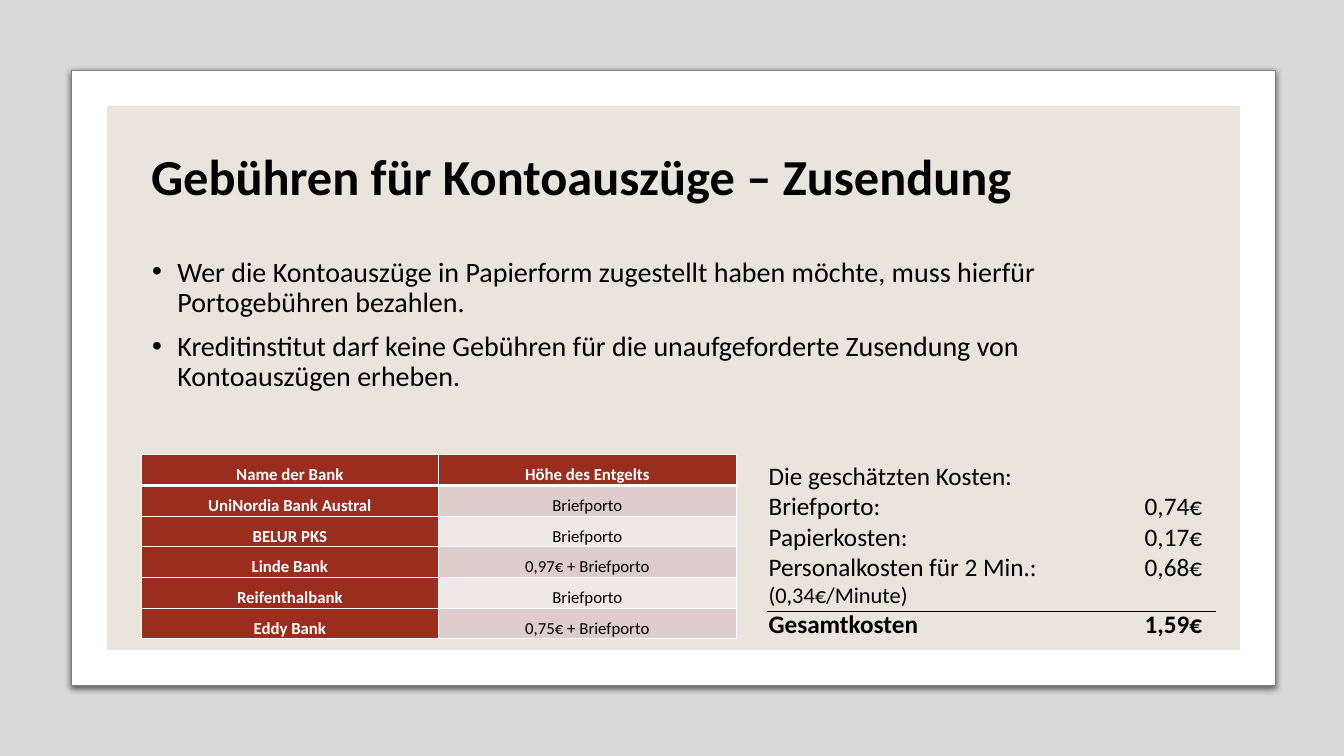
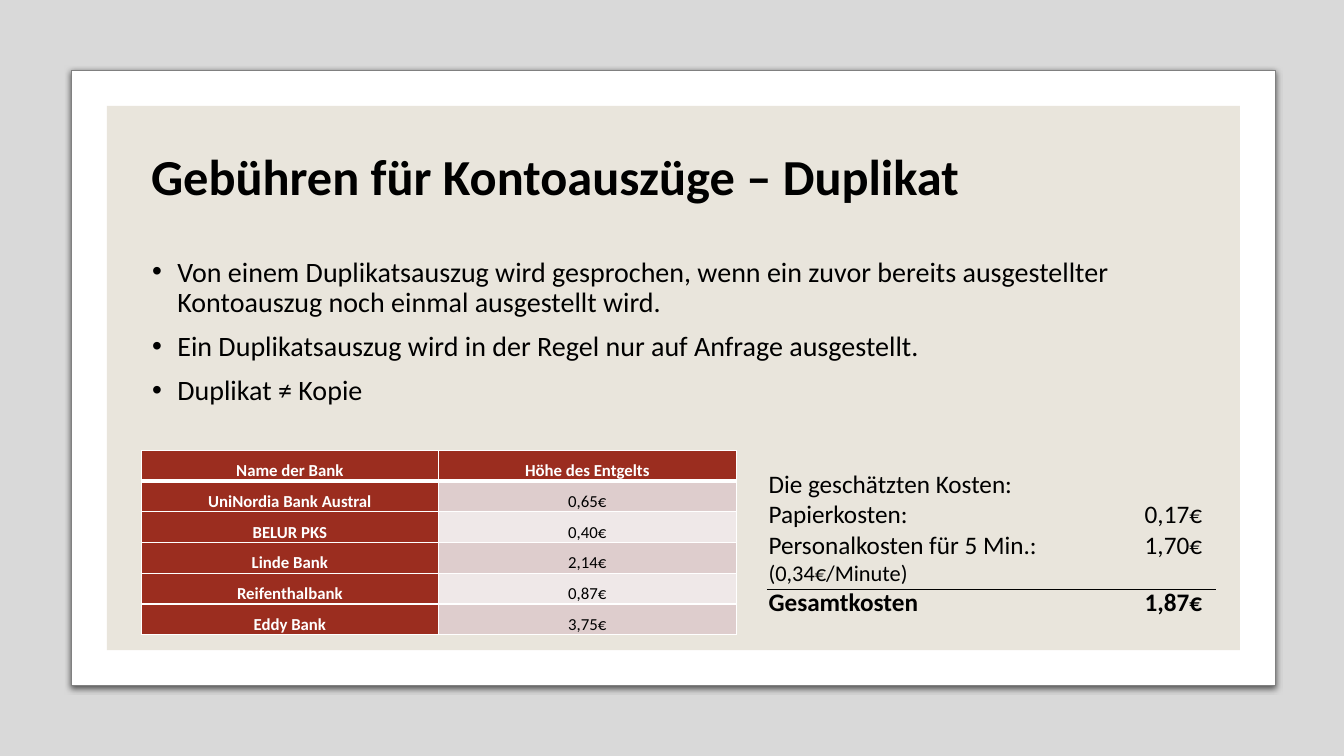
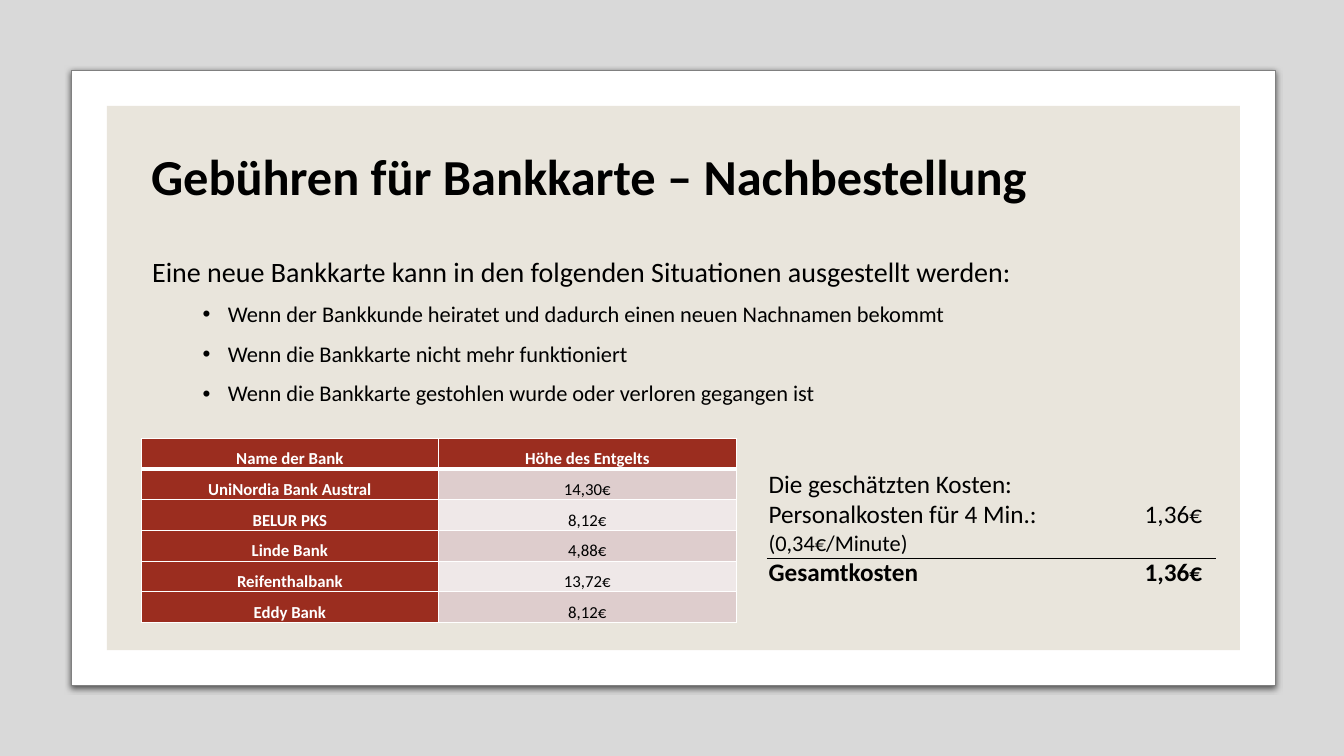
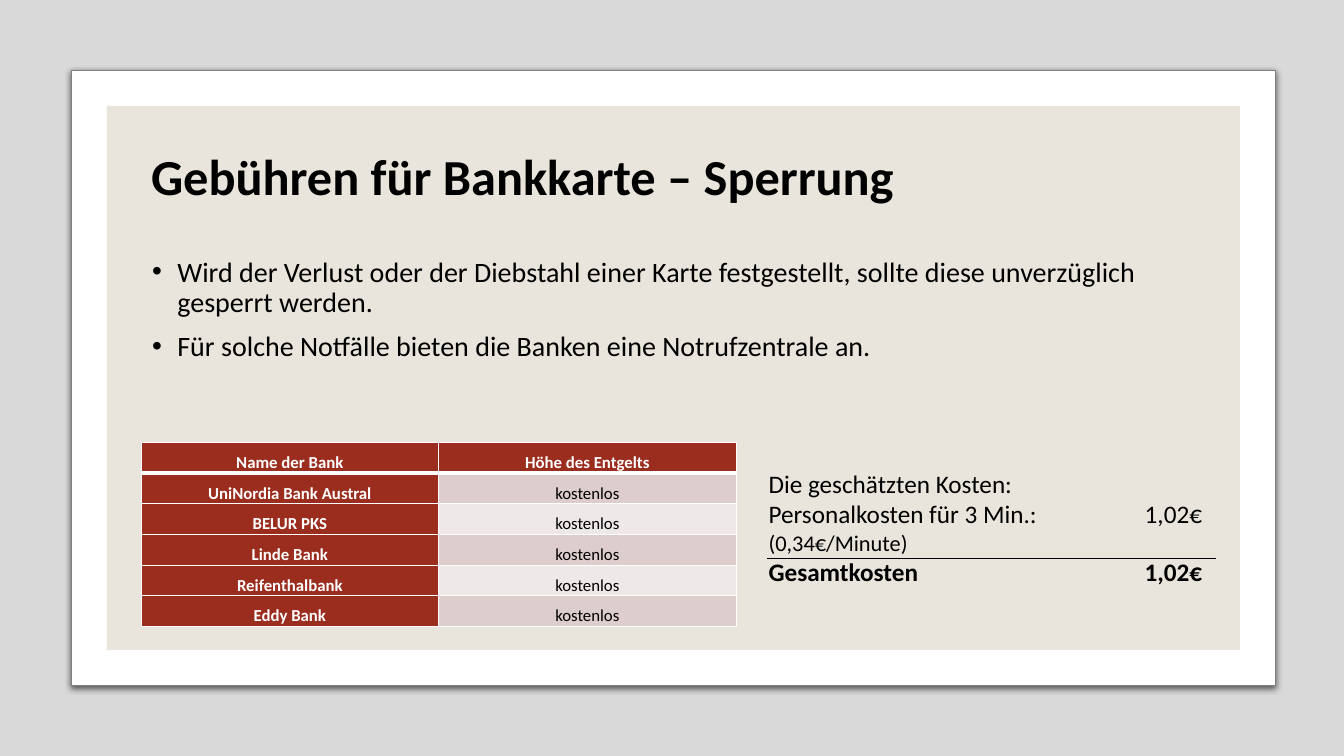
"""Build four slides comparing bank fees with their estimated costs."""
from lxml.etree import SubElement
from pptx import Presentation
from pptx.dml.color import RGBColor
from pptx.enum.shapes import MSO_CONNECTOR, MSO_SHAPE
from pptx.enum.text import MSO_ANCHOR, PP_ALIGN
from pptx.oxml.ns import qn
from pptx.util import Inches, Pt

RECTANGLE = MSO_SHAPE.RECTANGLE
ROUNDED = MSO_SHAPE.ROUNDED_RECTANGLE
STRAIGHT = MSO_CONNECTOR.STRAIGHT
MIDDLE = MSO_ANCHOR.MIDDLE
TOP = MSO_ANCHOR.TOP
CENTER = PP_ALIGN.CENTER

COLORS = {
    "black": "000000",
    "white": "FFFFFF",
    "outline": "808080",
    "sand": "E9E5DC",
    "brick": "9B2D1F",
    "rose": "DECDCD",
    "blush": "EFE8E8",
}
FONT = "Calibri"
SLIDE_WIDTH, SLIDE_HEIGHT = 13.33, 7.5
UNIT = 0.35
LEFT_COLUMN = 4
COST_COLUMN = 21.5
TEXT_WIDTH = 30.1
TABLE_WIDTH = 16.86
COST_WIDTH = 12.97

BANKS = ["UniNordia Bank Austral", "BELUR PKS", "Linde Bank", "Reifenthalbank", "Eddy Bank"]

SLIDES = [
    {
        "title": "Gebühren für Kontoauszüge – Zusendung",
        "points": [
            "Wer die Kontoauszüge in Papierform zugestellt haben möchte, muss hierfür "
            "Portogebühren bezahlen.",
            "Kreditinstitut darf keine Gebühren für die unaufgeforderte Zusendung von "
            "Kontoauszügen erheben.",
        ],
        "table_row": 12.89,
        "fees": ["Briefporto", "Briefporto", "0,97€ + Briefporto", "Briefporto",
                 "0,75€ + Briefporto"],
        "cost_row": 12.91,
        "costs": [("Briefporto:", "0,74€"), ("Papierkosten:", "0,17€"),
                  ("Personalkosten für 2 Min.:", "0,68€")],
        "total": "1,59€",
    },
    {
        "title": "Gebühren für Kontoauszüge – Duplikat",
        "points": [
            "Von einem Duplikatsauszug wird gesprochen, wenn ein zuvor bereits "
            "ausgestellter Kontoauszug noch einmal ausgestellt wird.",
            "Ein Duplikatsauszug wird in der Regel nur auf Anfrage ausgestellt.",
            "Duplikat ≠ Kopie",
        ],
        "table_row": 12.77,
        "fees": ["0,65€", "0,40€", "2,14€", "0,87€", "3,75€"],
        "cost_row": 13.14,
        "costs": [("Papierkosten:", "0,17€"), ("Personalkosten für 5 Min.:", "1,70€")],
        "total": "1,87€",
    },
    {
        "title": "Gebühren für Bankkarte – Nachbestellung",
        "lead": "Eine neue Bankkarte kann in den folgenden Situationen ausgestellt werden:",
        "points": [
            "Wenn der Bankkunde heiratet und dadurch einen neuen Nachnamen bekommt",
            "Wenn die Bankkarte nicht mehr funktioniert",
            "Wenn die Bankkarte gestohlen wurde oder verloren gegangen ist",
        ],
        "table_row": 12.43,
        "fees": ["14,30€", "8,12€", "4,88€", "13,72€", "8,12€"],
        "cost_row": 13.14,
        "costs": [("Personalkosten für 4 Min.:", "1,36€")],
        "total": "1,36€",
    },
    {
        "title": "Gebühren für Bankkarte – Sperrung",
        "points": [
            "Wird der Verlust oder der Diebstahl einer Karte festgestellt, sollte diese "
            "unverzüglich gesperrt werden.",
            "Für solche Notfälle bieten die Banken eine Notrufzentrale an.",
        ],
        "table_row": 12.54,
        "fees": ["kostenlos"] * 5,
        "cost_row": 13.14,
        "costs": [("Personalkosten für 3 Min.:", "1,02€")],
        "total": "1,02€",
    },
]


def color(name):
    """Look up a named colour."""
    return RGBColor.from_string(COLORS[name])


def grid(*units):
    """Turn grid units into lengths."""
    return [Inches(unit * UNIT) for unit in units]


def add_panel(page, kind, area, fill):
    """Add a filled shape without line or shadow."""
    panel = page.shapes.add_shape(kind, *area)
    panel.shadow.inherit = False
    panel.fill.solid()
    panel.fill.fore_color.rgb = color(fill)
    panel.line.fill.background()
    return panel


def set_alpha(color_element, percent):
    """Make a colour element partly transparent."""
    SubElement(color_element, qn("a:alpha"), val=str(percent * 1000))


def add_backdrop(page):
    """Draw the grey surround, the white card and the sand panel."""
    surround = add_panel(page, RECTANGLE,
                         (0, 0, Inches(SLIDE_WIDTH), Inches(SLIDE_HEIGHT)), "black")
    set_alpha(surround._element.spPr.find(".//" + qn("a:srgbClr")), 15)

    left, top, width, height = 2.03, 2, 34.11, 17.43
    card = add_panel(page, ROUNDED, grid(left, top, width, height), "white")
    card.adjustments[0] = 0
    card.line.color.rgb = color("outline")
    card.line.width = Pt(0.75)
    effects = card._element.spPr.find(qn("a:effectLst"))
    shadow = SubElement(effects, qn("a:outerShdw"), blurRad=str(Pt(4.5)),
                        dist=str(Pt(1.5)), dir="5400000", algn="t", rotWithShape="0")
    set_alpha(SubElement(shadow, qn("a:srgbClr"), val=COLORS["black"]), 63)

    add_panel(page, RECTANGLE, grid(left + 1, top + 1, width - 2, height - 2), "sand")


def add_box(page, area, anchor=TOP):
    """Add a wrapping text box and return its text frame."""
    frame = page.shapes.add_textbox(*area).text_frame
    frame.word_wrap = True
    frame.vertical_anchor = anchor
    return frame


def next_para(frame):
    """Return the empty first paragraph, or a new one."""
    first = frame.paragraphs[0]
    return frame.add_paragraph() if first.runs else first


def add_span(para, text, size, bold=False, ink="black"):
    """Add one formatted run."""
    span = para.add_run()
    span.text = text
    span.font.name = FONT
    span.font.size = Pt(size)
    span.font.bold = bold
    span.font.color.rgb = color(ink)


def add_title(page, text):
    """Add the slide title."""
    frame = add_box(page, grid(LEFT_COLUMN, 3, TEXT_WIDTH, 4.17), MIDDLE)
    para = frame.paragraphs[0]
    para.line_spacing = 0.9
    add_span(para, text, 36, bold=True)


def add_body_para(frame, text, size, before, after, indent=None):
    """Add a body paragraph, bulleted when an indent is given."""
    para = next_para(frame)
    para.line_spacing = 0.9
    para.space_before = Pt(before)
    para.space_after = Pt(after)
    if indent:
        properties = para._p.get_or_add_pPr()
        properties.set("marL", str(Inches(indent)))
        properties.set("indent", str(Inches(-0.25)))
        SubElement(properties, qn("a:buFont"), typeface="Arial")
        SubElement(properties, qn("a:buChar"), char="•")
    add_span(para, text, size)


def add_body(page, points, lead=None):
    """Add the bullets, one level lower when a lead sentence opens them."""
    frame = add_box(page, grid(LEFT_COLUMN + 0.03, 7.17, TEXT_WIDTH, 10.23))
    if lead:
        add_body_para(frame, lead, 20, 10, 6)
    for point in points:
        if lead:
            add_body_para(frame, point, 16, 5, 6, 0.75)
        else:
            add_body_para(frame, point, 20, 10, 0, 0.25)


def add_borders(cell, bottom):
    """Draw white cell borders with the given bottom width."""
    properties = cell._tc.get_or_add_tcPr()
    for side, width in (("L", 1), ("R", 1), ("T", 1), ("B", bottom)):
        line = SubElement(properties, qn("a:ln" + side), w=str(Pt(width)))
        fill = SubElement(line, qn("a:solidFill"))
        SubElement(fill, qn("a:srgbClr"), val=COLORS["white"])


def fill_cell(cell, text, fill, heading, bottom):
    """Write and format one table cell."""
    add_borders(cell, bottom)
    cell.fill.solid()
    cell.fill.fore_color.rgb = color(fill)
    cell.vertical_anchor = MIDDLE
    cell.margin_left = cell.margin_right = Inches(0.07)
    cell.margin_top = cell.margin_bottom = 0
    para = cell.text_frame.paragraphs[0]
    para.alignment = CENTER
    para.line_spacing = 1.5
    add_span(para, text, 12, heading, "white" if heading else "black")


def add_fee_table(page, top, fees):
    """Add the table of banks and fees."""
    rows = [("Name der Bank", "Höhe des Entgelts"), *zip(BANKS, fees)]
    area = grid(LEFT_COLUMN, top, TABLE_WIDTH, 0.87 * len(rows))
    table = page.shapes.add_table(len(rows), 2, *area).table
    for row, texts in enumerate(rows):
        for column, text in enumerate(texts):
            heading = row == 0 or column == 0
            band = "rose" if row % 2 else "blush"
            fill_cell(table.cell(row, column), text, "brick" if heading else band,
                      heading, 1 if row else 3)


def add_cost_para(frame, label, amount=None, size=18, bold=False):
    """Add a cost line with its amount at a right tab stop."""
    para = next_para(frame)
    if amount:
        tabs = SubElement(para._p.get_or_add_pPr(), qn("a:tabLst"))
        SubElement(tabs, qn("a:tab"), pos=str(Inches(4.3)), algn="r")
        label = f"{label}\t{amount}"
    add_span(para, label, size, bold)


def add_costs(page, top, costs, total):
    """Add the cost estimate and the rule above its total."""
    lines = len(costs) + 1
    frame = add_box(page, grid(COST_COLUMN, top, COST_WIDTH, 1.8 + 0.87 * lines))
    add_cost_para(frame, "Die geschätzten Kosten:")
    for label, amount in costs:
        add_cost_para(frame, label, amount)
    add_cost_para(frame, "(0,34€/Minute)", size=16)
    add_cost_para(frame, "Gesamtkosten", total, bold=True)

    left, level = COST_COLUMN + 0.23, top + 0.95 + 0.87 * lines
    rule = page.shapes.add_connector(
        STRAIGHT, *grid(left, level, left + 12.73, level))
    rule.line.color.rgb = color("black")
    rule.line.width = Pt(0.5)
    SubElement(rule._element.spPr, qn("a:effectLst"))


def main():
    """Build and save the deck."""
    deck = Presentation()
    deck.slide_width, deck.slide_height = Inches(SLIDE_WIDTH), Inches(SLIDE_HEIGHT)
    for content in SLIDES:
        page = deck.slides.add_slide(deck.slide_layouts[6])
        add_backdrop(page)
        add_title(page, content["title"])
        add_fee_table(page, content["table_row"], content["fees"])
        add_costs(page, content["cost_row"], content["costs"], content["total"])
        add_body(page, content["points"], content.get("lead"))
    deck.save("out.pptx")


if __name__ == "__main__":
    main()
